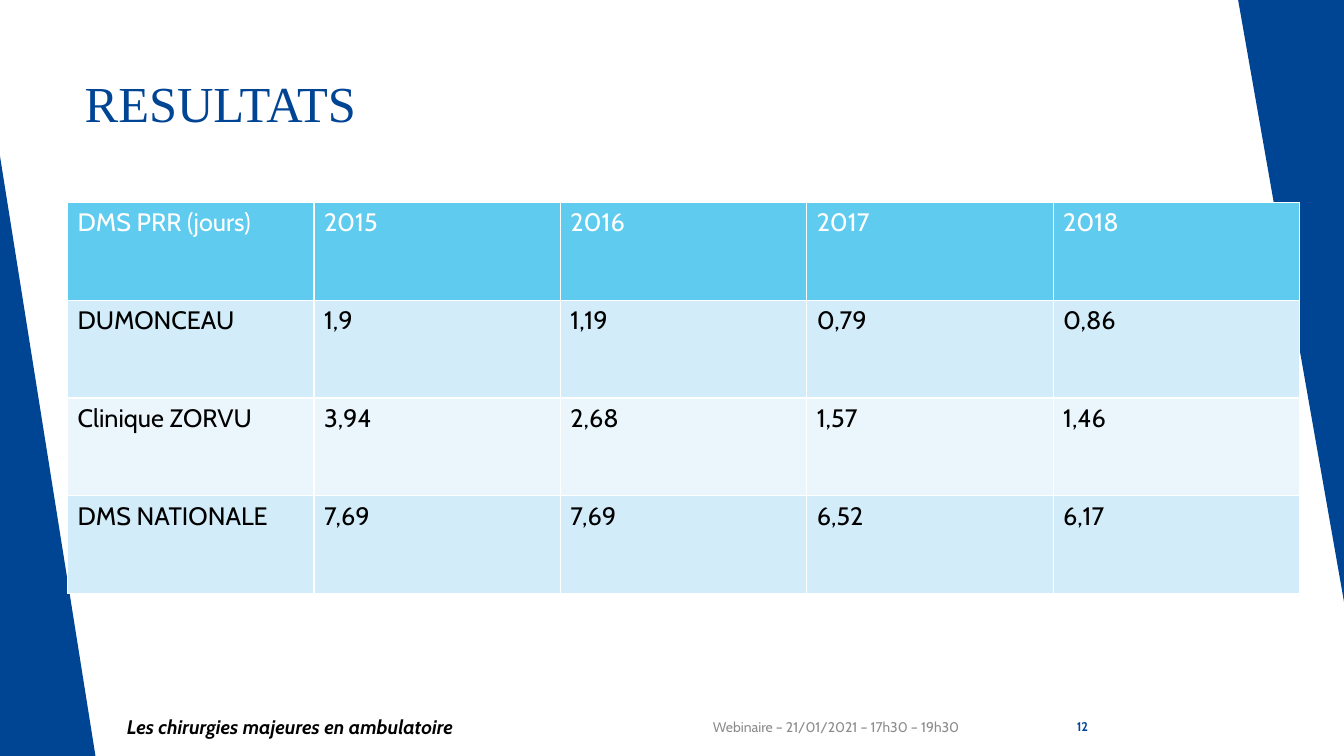
"""Build the results slide: mean length of stay by facility and year."""
import dataclasses

import lxml.etree
import pptx
import pptx.dml.color
import pptx.enum.shapes
import pptx.enum.text
import pptx.oxml.ns
import pptx.util

Inches = pptx.util.Inches
Align = pptx.enum.text.PP_ALIGN
Anchor = pptx.enum.text.MSO_ANCHOR


@dataclasses.dataclass(frozen=True)
class Theme:
    navy: str = "004494"
    sky: str = "5FCBEF"
    bands: tuple = ("D2ECF9", "EAF6FC")
    white: str = "FFFFFF"
    black: str = "000000"
    grey: str = "8C8C8C"
    title_font: str = "Times New Roman"
    body_font: str = "Cabin"
    title_size: int = 36
    table_size: int = 18
    footer_size: int = 14
    date_size: int = 10
    number_size: int = 9


theme = Theme()


def color(value):
    return pptx.dml.color.RGBColor.from_string(value)


def write(paragraph, text, size, ink, font=theme.body_font, bold=False, italic=False):
    run = paragraph.add_run()
    run.text = text
    run.font.name = font
    run.font.size = pptx.util.Pt(size)
    run.font.color.rgb = color(ink)
    run.font.bold = bold
    run.font.italic = italic


presentation = pptx.Presentation()
presentation.slide_width = Inches(13.33)
presentation.slide_height = Inches(7.5)
slide = presentation.slides.add_slide(presentation.slide_layouts.get_by_name("Title Only"))

for left, top, width, rotation in [(0, 1.55, 0.95, 0), (12.28, 0, 1.05, 180)]:
    triangle = slide.shapes.add_shape(
        pptx.enum.shapes.MSO_SHAPE.RIGHT_TRIANGLE,
        Inches(left), Inches(top), Inches(width), Inches(5.97))
    triangle.rotation = rotation
    triangle.shadow.inherit = False
    triangle.fill.solid()
    triangle.fill.fore_color.rgb = color(theme.navy)
    triangle.line.fill.background()

title = slide.shapes.title
title.left, title.top = Inches(0.74), Inches(0.67)
title.width, title.height = Inches(9.4), Inches(1.44)
title.text_frame.vertical_anchor = Anchor.TOP
title.text_frame.auto_size = pptx.enum.text.MSO_AUTO_SIZE.NONE
title_paragraph = title.text_frame.paragraphs[0]
title_paragraph.alignment = Align.LEFT
write(title_paragraph, "RESULTATS", theme.title_size, theme.navy, theme.title_font)

footers = [
    (10.14, 0.75, "12", theme.number_size, theme.navy, Align.RIGHT, True, False),
    (6.72, 2.89, "Webinaire – 21/01/2021 – 17h30 – 19h30",
     theme.date_size, theme.grey, Align.RIGHT, False, False),
    (1.16, 5.35, "Les chirurgies majeures en ambulatoire",
     theme.footer_size, theme.black, Align.LEFT, True, True),
]
for left, width, text, size, ink, alignment, bold, italic in footers:
    footer = slide.shapes.add_textbox(Inches(left), Inches(7.01), Inches(width), Inches(0.4))
    footer.text_frame.word_wrap = True
    footer.text_frame.vertical_anchor = Anchor.MIDDLE
    footer_paragraph = footer.text_frame.paragraphs[0]
    footer_paragraph.alignment = alignment
    write(footer_paragraph, text, size, ink, bold=bold, italic=italic)

stays = [
    ["DMS PRR (jours)", "2015", "2016", "2017", "2018"],
    ["DUMONCEAU", "1,9", "1,19", "0,79", "0,86"],
    ["Clinique ZORVU", "3,94", "2,68", "1,57", "1,46"],
    ["DMS NATIONALE", "7,69", "7,69", "6,52", "6,17"],
]
table = slide.shapes.add_table(
    len(stays), len(stays[0]), Inches(0.67), Inches(2.01), Inches(12.22), Inches(3.88)).table
for row_index, values in enumerate(stays):
    is_header = row_index == 0
    background = theme.sky if is_header else theme.bands[(row_index - 1) % 2]
    for column_index, value in enumerate(values):
        cell = table.cell(row_index, column_index)
        write(cell.text_frame.paragraphs[0], value, theme.table_size,
              theme.white if is_header else theme.black)
        properties = cell._tc.get_or_add_tcPr()
        for side in ("a:lnL", "a:lnR", "a:lnT", "a:lnB"):
            border = lxml.etree.SubElement(
                properties, pptx.oxml.ns.qn(side), w=str(pptx.util.Pt(1)))
            border_fill = lxml.etree.SubElement(border, pptx.oxml.ns.qn("a:solidFill"))
            lxml.etree.SubElement(border_fill, pptx.oxml.ns.qn("a:srgbClr"), val=theme.white)
        cell.fill.solid()
        cell.fill.fore_color.rgb = color(background)

presentation.save("out.pptx")
